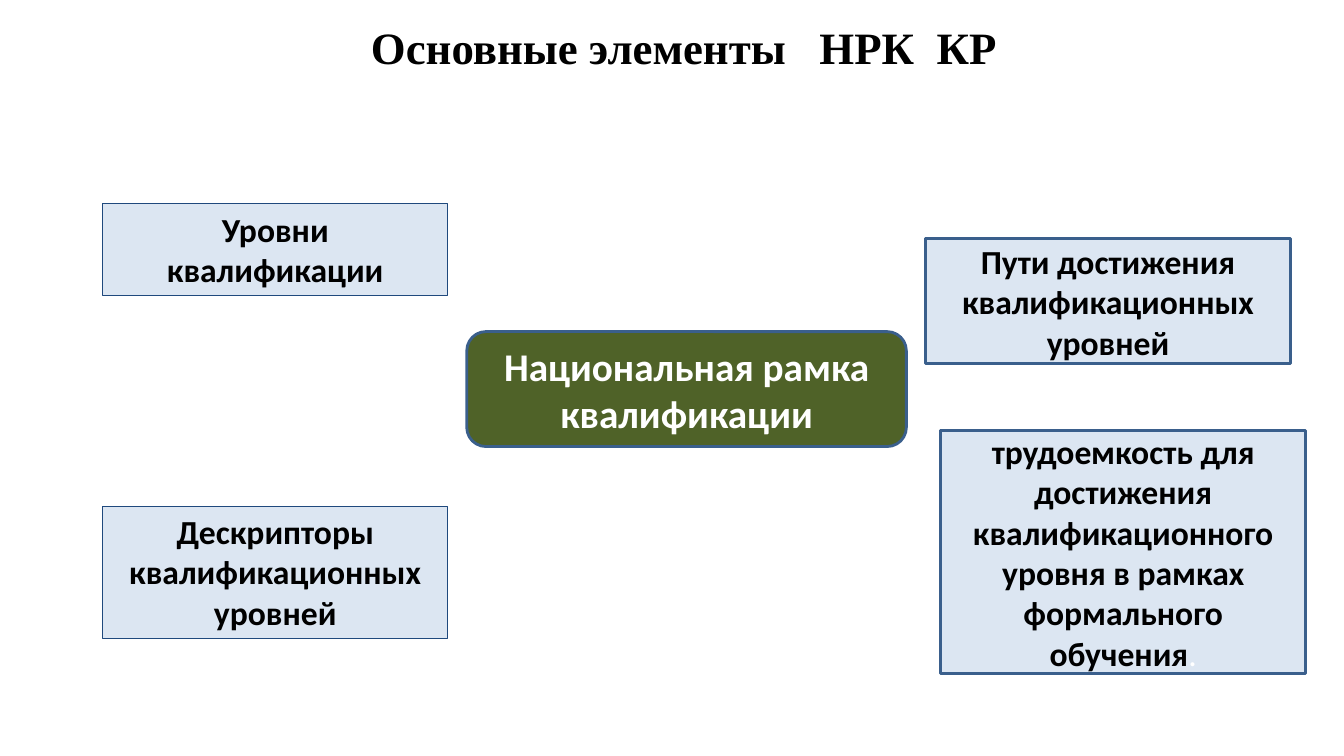
from pptx import Presentation
from pptx.dml.color import RGBColor
from pptx.enum import shapes, text
from pptx.util import Inches, Pt

COLORS = {
    "black": "000000",
    "white": "FFFFFF",
    "green": "4F6228",
    "pale": "DCE6F2",
    "blue": "3A5F8C",
    "navy": "1F497D",
}
RECT = shapes.MSO_SHAPE.RECTANGLE
ROUNDED = shapes.MSO_SHAPE.ROUNDED_RECTANGLE
TOP = text.MSO_ANCHOR.TOP
MIDDLE = text.MSO_ANCHOR.MIDDLE


def color(name):
    return RGBColor.from_string(COLORS[name])


def write(shape, words, font_name, size, font_color, anchor):
    frame = shape.text_frame
    frame.word_wrap = True
    frame.vertical_anchor = anchor
    paragraph = frame.paragraphs[0]
    paragraph.alignment = text.PP_ALIGN.CENTER
    paragraph.add_run().text = words
    paragraph.font.name = font_name
    paragraph.font.size = Pt(size)
    paragraph.font.bold = True
    paragraph.font.color.rgb = color(font_color)
    return paragraph


presentation = Presentation()
presentation.slide_width = Inches(13.33)
presentation.slide_height = Inches(7.5)
slide = presentation.slides.add_slide(presentation.slide_layouts[6])

# Title
title = slide.shapes.add_textbox(Inches(1.02), Inches(0.15), Inches(11.53), Inches(0.64))
write(title, "Основные элементы   НРК  КР", "Times New Roman", 32, "black", TOP)

# Central framework and its four elements
boxes = [
    (ROUNDED, 4.63, 3.29, 4.36, 1.14, "green", "blue", 2, 28, "white", MIDDLE,
     "Национальная рамка квалификации"),
    (RECT, 1.02, 2.02, 3.42, 0.91, "pale", "navy", 0.75, 24, "black", TOP,
     "Уровни квалификации"),
    (RECT, 1.02, 5.02, 3.42, 1.31, "pale", "navy", 0.75, 24, "black", TOP,
     "Дескрипторы квалификационных уровней"),
    (RECT, 9.18, 2.37, 3.62, 1.24, "pale", "blue", 2, 24, "black", MIDDLE,
     "Пути достижения квалификационных уровней"),
    (RECT, 9.33, 4.27, 3.62, 2.41, "pale", "blue", 2, 24, "black", MIDDLE,
     "трудоемкость для достижения квалификационного уровня в рамках формального обучения"),
]
for kind, left, top, width, height, fill, line, weight, size, font_color, anchor, words in boxes:
    shape = slide.shapes.add_shape(kind, Inches(left), Inches(top), Inches(width), Inches(height))
    shape.shadow.inherit = False
    shape.fill.solid()
    shape.fill.fore_color.rgb = color(fill)
    shape.line.color.rgb = color(line)
    shape.line.width = Pt(weight)
    paragraph = write(shape, words, "Calibri", size, font_color, anchor)

# White full stop closing the last box
full_stop = paragraph.add_run()
full_stop.text = "."
full_stop.font.bold = False
full_stop.font.color.rgb = color("white")

presentation.save("out.pptx")
